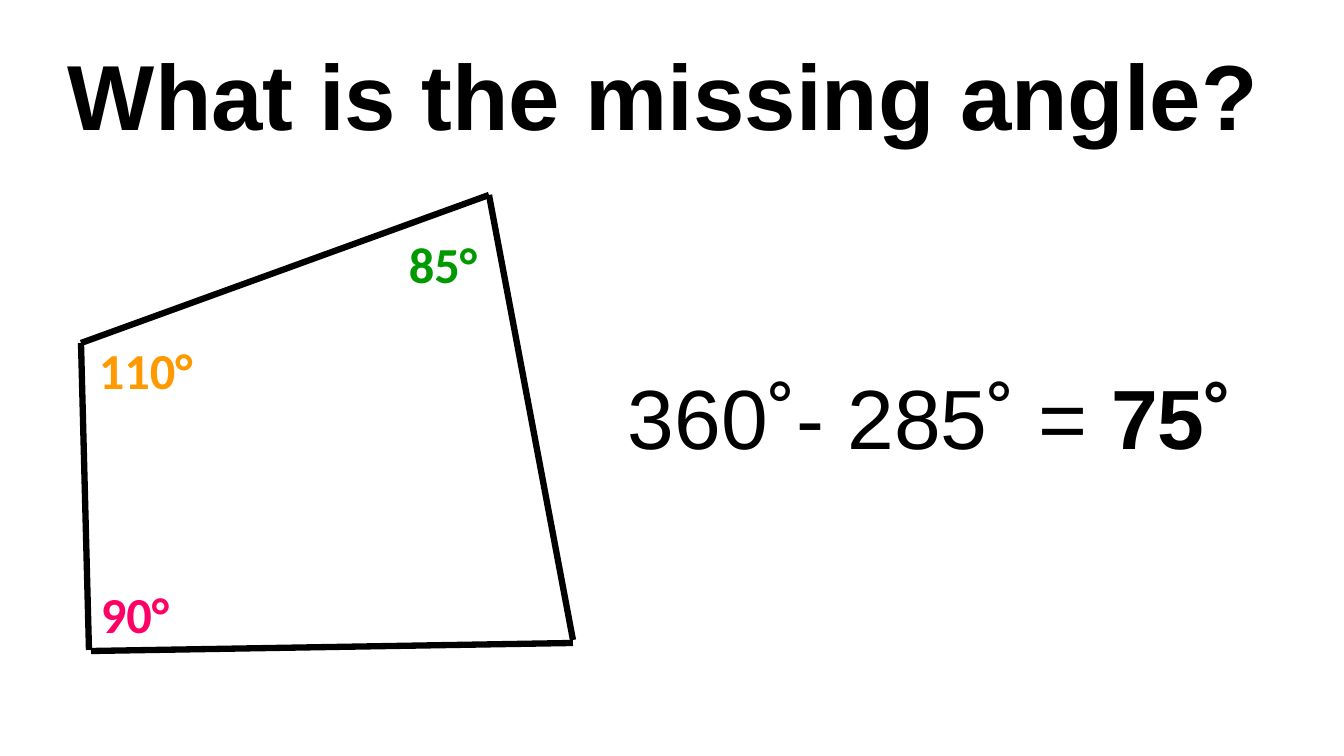
from pptx import Presentation, util as u
from pptx.dml.color import RGBColor
from pptx.enum import shapes, text
from pptx.oxml.ns import qn
from lxml import etree

EMU_PER_PX = 914400 / 100.8
BLACK = RGBColor(0x00, 0x00, 0x00)
PINK = RGBColor(0xFF, 0x00, 0x66)
ORANGE = RGBColor(0xFF, 0x99, 0x00)
GREEN = RGBColor(0x00, 0x99, 0x00)


def px(length):
    """Turn px into EMU."""
    return u.Emu(round(length * EMU_PER_PX))


def add_text(parent, box, *runs, size, font="Arial", color=BLACK,
             align=text.PP_ALIGN.LEFT, insets=(10, 10)):
    """Write (wording, bold) runs as one paragraph in a box."""
    label = parent.add_textbox(*map(px, box))
    frame = label.text_frame
    frame.word_wrap = True
    frame.margin_left, frame.margin_right = map(px, insets)
    paragraph = frame.paragraphs[0]
    paragraph.alignment = align
    for wording, bold in runs:
        run = paragraph.add_run()
        run.text = wording
        run.font.name = font
        run.font.size = u.Pt(size)
        run.font.bold = bold
        run.font.color.rgb = color


def add_side(parent, start, end):
    """Draw one side of the quadrilateral."""
    side = parent.add_connector(shapes.MSO_CONNECTOR.STRAIGHT,
                                *map(px, start + end))
    side.line.color.rgb = BLACK
    side.line.width = u.Pt(4.5)
    etree.SubElement(side._element.spPr, qn("a:effectLst"))


def add_title(slide, box):
    """Place the question, centred slightly left of the box centre."""
    add_text(slide.shapes, box, ("What is the missing angle?", True), size=66,
             align=text.PP_ALIGN.CENTER, insets=(0, 52))


def add_quadrilateral(slide, box):
    """Draw the four sides and the three known angles."""
    left, top, width, height = box
    right, bottom = left + width, top + height
    figure = slide.shapes.add_group_shape().shapes
    upper_left, upper_right = (left, top + 148), (left + 408, top)
    sides = [
        (upper_left, (left + 8, bottom - 1)),
        (upper_left, upper_right),
        (upper_right, (right, bottom - 11)),
        ((right, bottom - 8), (left + 10, bottom)),
    ]
    for start, end in sides:
        add_side(figure, start, end)
    angles = [
        ("90°", PINK, 10, 383, 120),
        ("110°", ORANGE, 8, 139, 155),
        ("85°", GREEN, 318, 33, 132),
    ]
    for angle, color, dx, dy, label_width in angles:
        add_text(figure, (left + dx, top + dy, label_width, 96), (angle, True),
                 size=36, font="Calibri", color=color)


def add_equation(slide, box):
    """Place the calculation with its answer in bold."""
    add_text(slide.shapes, box, ("360˚- 285˚ = ", False), ("75˚", True), size=60)


def main():
    """Build and save the slide."""
    deck = Presentation()
    deck.slide_width, deck.slide_height = px(1344), px(756)
    slide = deck.slides.add_slide(deck.slide_layouts[6])
    add_quadrilateral(slide, (81, 195, 492, 456))
    add_equation(slide, (618, 361, 654, 112))
    add_title(slide, (51, 33, 1277, 122))
    deck.save("out.pptx")


if __name__ == "__main__":
    main()
